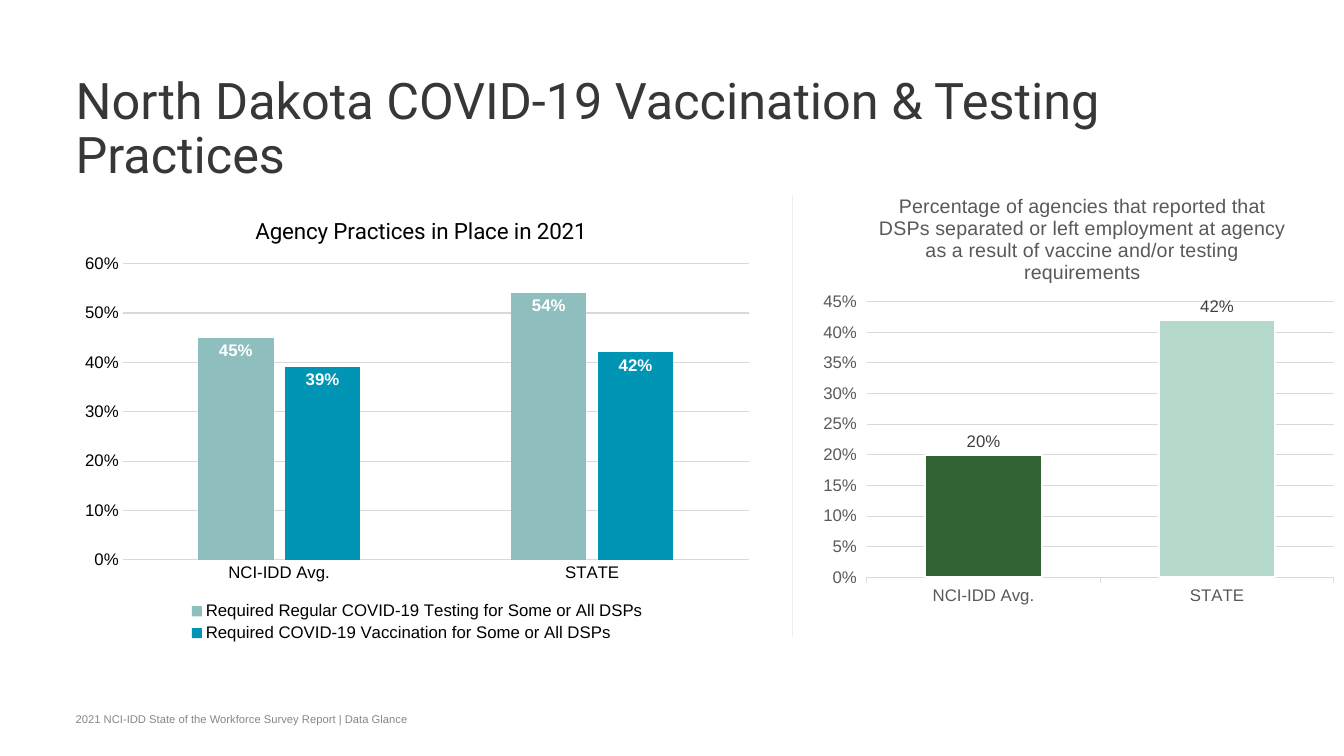
from lxml import etree
from pptx import Presentation
from pptx.chart.data import CategoryChartData
from pptx.dml.color import RGBColor
from pptx.enum.chart import XL_CHART_TYPE, XL_LABEL_POSITION, XL_LEGEND_POSITION, XL_TICK_MARK
from pptx.enum.shapes import MSO_CONNECTOR
from pptx.enum.text import MSO_ANCHOR
from pptx.oxml import parse_xml
from pptx.oxml.ns import qn
from pptx.util import Inches, Pt

COLUMNS = XL_CHART_TYPE.COLUMN_CLUSTERED
INSIDE_END = XL_LABEL_POSITION.INSIDE_END
OUTSIDE_END = XL_LABEL_POSITION.OUTSIDE_END
BOTTOM = XL_LEGEND_POSITION.BOTTOM
NO_TICK = XL_TICK_MARK.NONE
TICK_OUT = XL_TICK_MARK.OUTSIDE
ANCHOR_TOP = MSO_ANCHOR.TOP
ANCHOR_BOTTOM = MSO_ANCHOR.BOTTOM
STRAIGHT = MSO_CONNECTOR.STRAIGHT

CATEGORIES = ["NCI-IDD Avg.", "STATE"]
CHART_NS = "http://schemas.openxmlformats.org/drawingml/2006/chart"


def color(value):
    """Turn a hex string into a colour."""
    return RGBColor.from_string(value)


def set_font(font, size, ink, name="Arial", bold=False):
    """Set size, colour, typeface and weight of a font."""
    font.size = Pt(size)
    font.color.rgb = color(ink)
    font.name = name
    font.bold = bold


def set_line(line, ink, width=0.75):
    """Give a line its colour and width."""
    line.color.rgb = color(ink)
    line.width = Pt(width)


def add_text(page, box, text, size, ink, name="Arial", anchor=ANCHOR_TOP, spacing=1.0):
    """Place one paragraph in a box without margins."""
    frame = page.shapes.add_textbox(*map(Inches, box)).text_frame
    frame.word_wrap = True
    frame.vertical_anchor = anchor
    frame.margin_left = frame.margin_right = frame.margin_top = frame.margin_bottom = 0
    para = frame.paragraphs[0]
    para.text = text
    para.line_spacing = spacing
    set_font(para.font, size, ink, name)


def make_layout(target=None, **shares):
    """Build a manual chart layout from shares of the chart's size."""
    layout = parse_xml(f'<c:layout xmlns:c="{CHART_NS}"><c:manualLayout/></c:layout>')
    settings = {"layoutTarget": target} if target else {}
    settings |= {"xMode": "edge", "yMode": "edge"} | shares
    for tag, value in settings.items():
        etree.SubElement(layout[0], qn(f"c:{tag}")).set("val", str(value))
    return layout


def replace_layout(parent, layout, position):
    """Swap the layout element of a chart part."""
    for old in parent.findall(qn("c:layout")):
        parent.remove(old)
    parent.insert(position, layout)


def set_title(chart, text, size, ink, name, corner):
    """Write the chart title with its top left corner at the given shares."""
    chart.has_title = True
    title = chart.chart_title
    para = title.text_frame.paragraphs[0]
    para.text = text
    set_font(para.font, size, ink, name)
    title.include_in_layout = False
    replace_layout(chart.element.find(".//" + qn("c:title")), make_layout(x=corner[0], y=corner[1]), 1)


def set_axes(chart, ink, tick, top, step):
    """Style both axes and scale the value axis."""
    for axis in (chart.category_axis, chart.value_axis):
        set_font(axis.tick_labels.font, 12, ink)
        axis.major_tick_mark = tick
        axis.minor_tick_mark = NO_TICK
    set_line(chart.category_axis.format.line, "D9D9D9")
    values = chart.value_axis
    values.minimum_scale, values.maximum_scale, values.major_unit = 0, top, step
    values.tick_labels.number_format = "0%"
    values.tick_labels.number_format_is_linked = False
    values.format.line.fill.background()
    set_line(values.major_gridlines.format.line, "D9D9D9")


def add_columns(page, box, series, plot_area, gap, overlap=0):
    """Place a column chart with its plot area given as shares of the box."""
    data = CategoryChartData(number_format="0%")
    data.categories = CATEGORIES
    for name, values in series:
        data.add_series(name, values)
    chart = page.shapes.add_chart(COLUMNS, *map(Inches, box), data).chart
    set_font(chart.font, 12, "000000")
    chart.has_legend = False
    plot = chart.plots[0]
    plot.vary_by_categories = False
    plot.gap_width, plot.overlap = gap, overlap
    shares = dict(zip("xywh", plot_area))
    replace_layout(chart.element.find(".//" + qn("c:plotArea")), make_layout("inner", **shares), 0)
    return chart


def set_labels(series, position, ink, bold=False):
    """Show percent values on a series."""
    labels = series.data_labels
    labels.show_value = True
    labels.number_format = "0%"
    labels.number_format_is_linked = False
    labels.position = position
    set_font(labels.font, 12, ink, bold=bold)


def add_practices(page, box):
    """Draw the chart of agency practices."""
    series = [
        ("Required Regular COVID-19 Testing for Some or All DSPs", (0.45, 0.54)),
        ("Required COVID-19 Vaccination for Some or All DSPs", (0.39, 0.42)),
    ]
    chart = add_columns(page, box, series, (0.074, 0.157, 0.905, 0.653), 200, -15)
    set_title(chart, "Agency Practices in Place in 2021", 16, "000000", "Roboto", (0.26, 0.045))
    set_axes(chart, "000000", NO_TICK, 0.6, 0.1)
    for bars, fill in zip(chart.plots[0].series, ("8EBEBE", "0094B5")):
        bars.format.fill.solid()
        bars.format.fill.fore_color.rgb = color(fill)
        set_labels(bars, INSIDE_END, "FFFFFF", True)
    chart.has_legend = True
    chart.legend.position = BOTTOM
    chart.legend.include_in_layout = False
    set_font(chart.legend.font, 12, "000000")


def add_separations(page, box):
    """Draw the chart of agencies where staff left."""
    chart = add_columns(page, box, [("Series 1", (0.2, 0.42))], (0.1, 0.298, 0.879, 0.62), 100)
    title = ("Percentage of agencies that reported that DSPs separated or left employment "
             "at agency as a result of vaccine and/or testing requirements")
    set_title(chart, title, 14, "595959", "Arial", (0.116, 0.045))
    set_axes(chart, "595959", TICK_OUT, 0.45, 0.05)
    bars = chart.plots[0].series[0]
    bars.format.fill.solid()
    bars.format.fill.fore_color.rgb = color("8EBEBE")
    set_line(bars.format.line, "FFFFFF", 1.5)
    for index, fill in enumerate(("316234", "B5D9CB")):
        point = bars.points[index].format
        point.fill.solid()
        point.fill.fore_color.rgb = color(fill)
        set_line(point.line, "FFFFFF", 1.5)
    set_labels(bars, OUTSIDE_END, "404040")


def add_divider(page, x, top, bottom):
    """Draw the vertical rule between the charts."""
    rule = page.shapes.add_connector(STRAIGHT, *map(Inches, (x, top, x, bottom)))
    set_line(rule.line, "EEEEEE")
    etree.SubElement(rule.element.spPr, qn("a:effectLst"))


def main():
    """Build the slide and save it."""
    deck = Presentation()
    deck.slide_width, deck.slide_height = Inches(13.33), Inches(7.5)
    page = deck.slides.add_slide(deck.slide_layouts[6])
    add_practices(page, (0.71, 1.91, 6.86, 4.5))
    add_text(page, (0.75, 0.75, 11.83, 1.2), "North Dakota COVID-19 Vaccination & Testing Practices",
             36, "373737", "Roboto", spacing=0.9)
    add_text(page, (0.75, 7.05, 7.86, 0.15),
             "2021 NCI-IDD State of the Workforce Survey Report | Data Glance",
             8, "878787", anchor=ANCHOR_BOTTOM)
    add_separations(page, (8.07, 1.68, 5.27, 4.41))
    add_divider(page, 7.86, 1.93, 6.32)
    deck.save("out.pptx")


if __name__ == "__main__":
    main()
